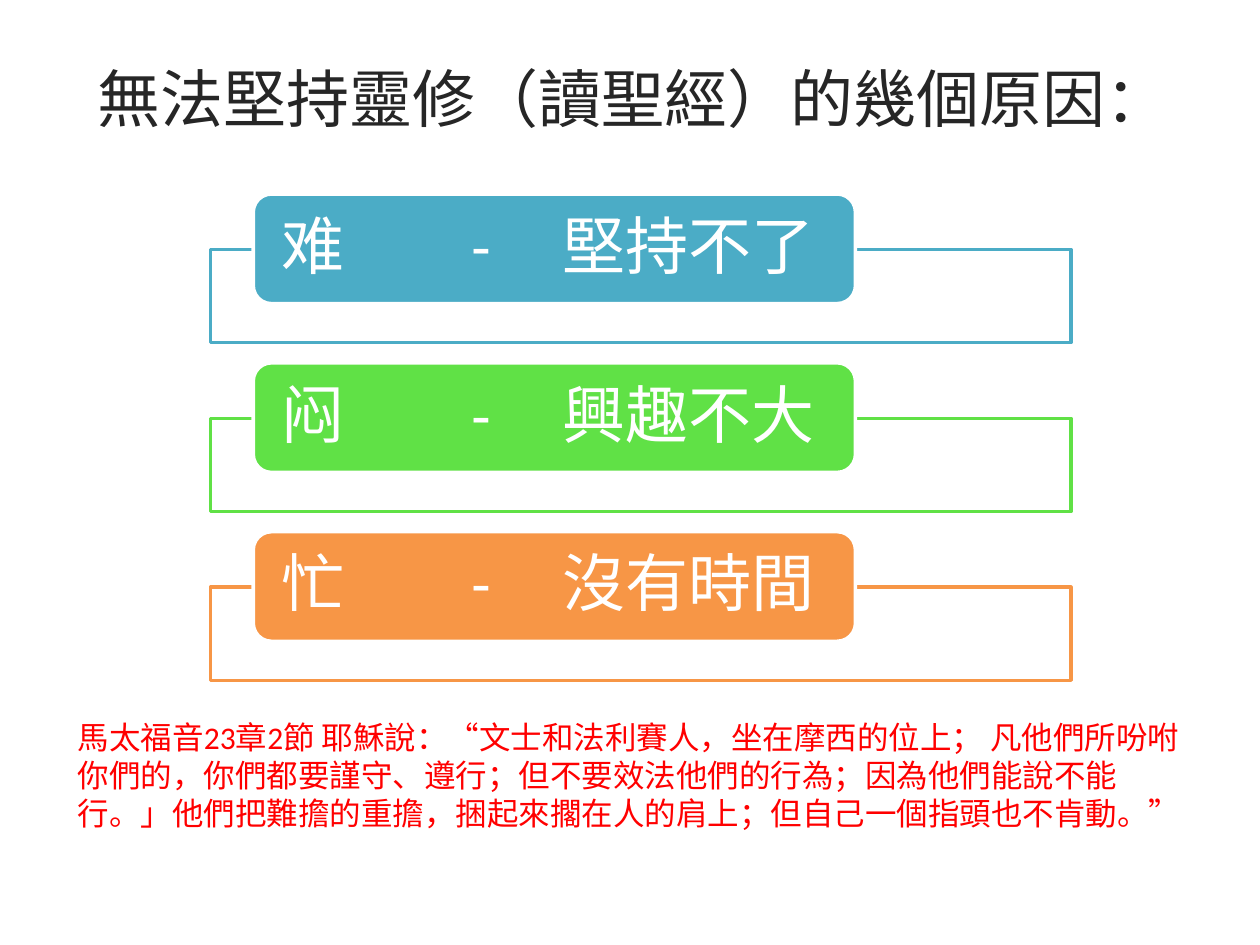
from dataclasses import dataclass

from pptx import Presentation
from pptx.dml.color import RGBColor
from pptx.enum.shapes import MSO_SHAPE
from pptx.enum.text import MSO_ANCHOR, MSO_AUTO_SIZE, PP_ALIGN
from pptx.oxml.ns import qn
from pptx.util import Inches, Pt
from lxml import etree

RECT = MSO_SHAPE.RECTANGLE
ROUND = MSO_SHAPE.ROUNDED_RECTANGLE
TOP, MIDDLE = MSO_ANCHOR.TOP, MSO_ANCHOR.MIDDLE
LEFT = PP_ALIGN.LEFT
FIXED = MSO_AUTO_SIZE.NONE

FONT = "Calibri"
WHITE = "FFFFFF"
FIRST, PITCH = 1.54, 1.34
TABS = (1.51, 2.23)
TITLE = "無法堅持靈修（讀聖經）的幾個原因："
VERSE = (
    "馬太福音23章2節 耶穌說：“文士和法利賽人，坐在摩西的位上； "
    "凡他們所吩咐你們的，你們都要謹守、遵行；但不要效法他們的行為；"
    "因為他們能說不能行。」他們把難擔的重擔，捆起來擱在人的肩上；"
    "但自己一個指頭也不肯動。”"
)


@dataclass
class Reason:
    word: str
    cause: str
    color: str


REASONS = [
    Reason("难", "堅持不了", "4BACC6"),
    Reason("闷", "興趣不大", "60E146"),
    Reason("忙", "沒有時間", "F79646"),
]


def rgb(color: str) -> RGBColor:
    return RGBColor.from_string(color)


def write(shape, text: str, size: int, color: str, anchor=TOP) -> None:
    frame = shape.text_frame
    frame.text = text
    frame.word_wrap = True
    frame.auto_size = FIXED
    frame.vertical_anchor = anchor
    para = frame.paragraphs[0]
    para.alignment = LEFT
    for run in para.runs:
        run.font.name = FONT
        run.font.size = Pt(size)
        run.font.color.rgb = rgb(color)


def add_box(slide, kind, left: float, top: float, width: float,
            height: float, fill: str, line: str):
    box = slide.shapes.add_shape(
        kind, Inches(left), Inches(top), Inches(width), Inches(height))
    box.shadow.inherit = False
    box.fill.solid()
    box.fill.fore_color.rgb = rgb(fill)
    box.line.color.rgb = rgb(line)
    box.line.width = Pt(2)
    return box


def set_alpha(shape, percent: int) -> None:
    """Set the opacity of a solid fill."""
    color = shape.fill._xPr.find(qn("a:solidFill"))[0]
    etree.SubElement(color, qn("a:alpha")).set("val", str(percent * 1000))


def set_tabs(para, stops: tuple[float, ...]) -> None:
    tabs = etree.SubElement(para._p.get_or_add_pPr(), qn("a:tabLst"))
    for stop in stops:
        tab = etree.SubElement(tabs, qn("a:tab"))
        tab.set("pos", str(Inches(stop)))
        tab.set("algn", "l")


def add_reason(slide, item: Reason, top: float) -> None:
    """Draw an outlined frame with a filled label over its top edge."""
    frame = add_box(slide, RECT, 1.67, top + 0.44, 6.83, 0.74,
                    WHITE, item.color)
    set_alpha(frame, 90)
    label = add_box(slide, ROUND, 2.01, top, 4.78, 0.87, item.color, WHITE)
    write(label, f"{item.word}\t-\t{item.cause}", 36, WHITE, MIDDLE)
    text = label.text_frame
    text.margin_left = text.margin_right = Inches(0.18)
    text.margin_top = text.margin_bottom = 0
    para = text.paragraphs[0]
    para.line_spacing = 0.9
    set_tabs(para, TABS)


def main() -> None:
    deck = Presentation()
    deck.slide_width, deck.slide_height = Inches(10), Inches(7.5)
    slide = deck.slides.add_slide(deck.slide_layouts[5])

    title = slide.shapes.title
    title.left, title.top = Inches(0.67), Inches(0.42)
    title.width, title.height = Inches(8.78), Inches(0.71)
    write(title, TITLE, 36, "262626")

    for row, item in enumerate(REASONS):
        add_reason(slide, item, FIRST + row * PITCH)

    verse = slide.shapes.add_textbox(
        Inches(0.52), Inches(5.65), Inches(9.08), Inches(1.01))
    write(verse, VERSE, 18, "FF0000")

    deck.save("out.pptx")


if __name__ == "__main__":
    main()
